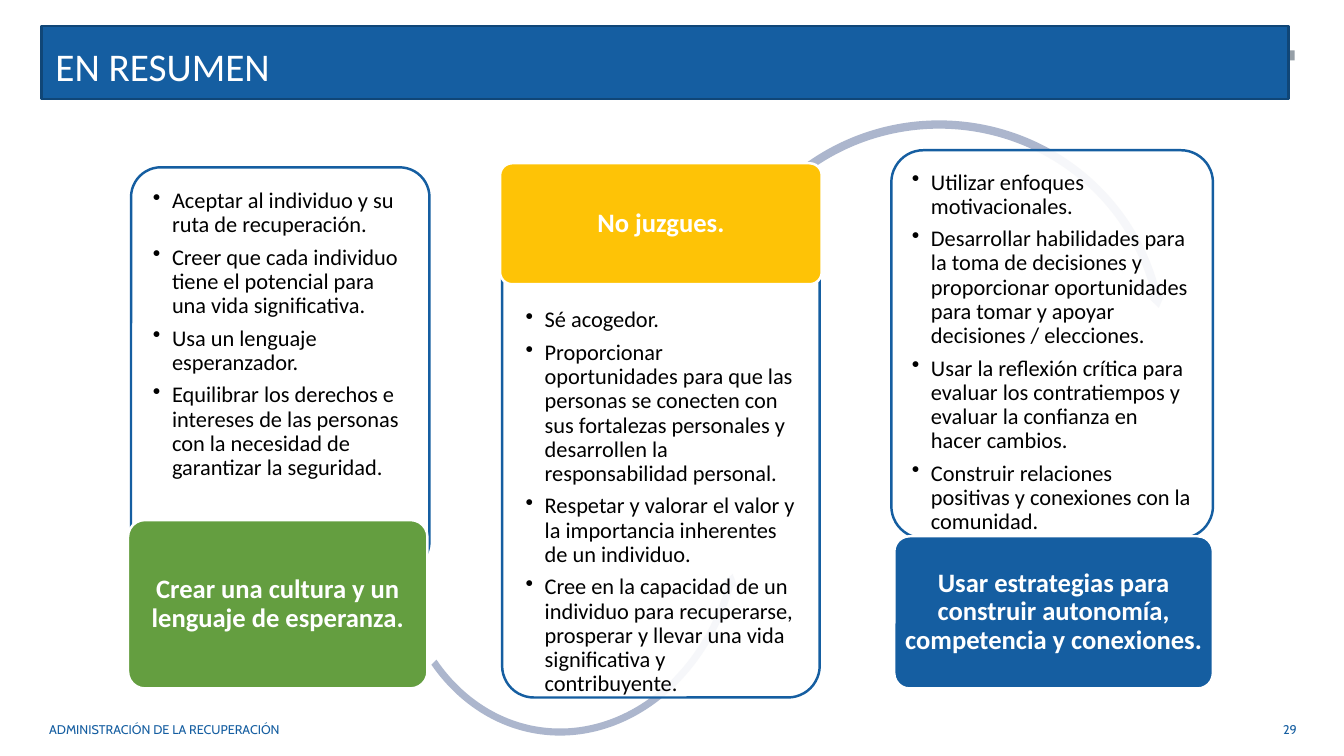
from lxml import etree
from pptx import Presentation
from pptx.dml.color import RGBColor
from pptx.enum.shapes import MSO_SHAPE as Preset
from pptx.enum.text import MSO_ANCHOR as Anchor, MSO_AUTO_SIZE as AutoSize, PP_ALIGN as Align
from pptx.oxml.ns import qn
from pptx.util import Inches, Pt

BLUE, NAVY, GREEN, YELLOW = "155EA1", "104677", "649E40", "FEC306"
WHITE, BLACK, GREY, ARC = "FFFFFF", "000000", "969FA7", "ACB6CD"
CORNER = 0.1  # corner radius as a share of the shorter side

# Each column: card frame, card insets, bullets, label frame, label colour, label text
COLUMNS = [
    ((1.3, 1.66, 2.96, 4.01), (0.22, 0.22, 0.22, 1.11), [
        "Aceptar al individuo y su ruta de recuperación.",
        "Creer que cada individuo tiene el potencial para una vida significativa.",
        "Usa un lenguaje esperanzador.",
        "Equilibrar los derechos e intereses de las personas con la necesidad "
        "de garantizar la seguridad.",
    ], (1.27, 5.16, 2.97, 1.67), GREEN, "Crear una cultura y un lenguaje de esperanza."),
    ((4.98, 1.69, 3.15, 5.23), (0.23, 1.37, 0.23, 0.23), [
        "Sé acogedor.",
        "Proporcionar oportunidades para que las personas se conecten con sus "
        "fortalezas personales y desarrollen la responsabilidad personal.",
        "Respetar y valorar el valor y la importancia inherentes de un individuo.",
        "Cree en la capacidad de un individuo para recuperarse, prosperar y "
        "llevar una vida significativa y contribuyente.",
    ], (4.96, 1.62, 3.19, 1.2), YELLOW, "No juzgues."),
    ((8.84, 1.49, 3.19, 3.85), (0.2, 0.2, 0.2, 0.2), [
        "Utilizar enfoques motivacionales.",
        "Desarrollar habilidades para la toma de decisiones y proporcionar "
        "oportunidades para tomar y apoyar decisiones / elecciones.",
        "Usar la reflexión crítica para evaluar los contratiempos y evaluar "
        "la confianza en hacer cambios.",
        "Construir relaciones positivas y conexiones con la comunidad.",
    ], (8.87, 5.32, 3.16, 1.51), BLUE,
     "Usar estrategias para construir autonomía, competencia y conexiones."),
]

# The arc that follows a column: preset, frame, rotation, adjustments
ARCS = [
    (Preset.LEFT_CIRCULAR_ARROW, (3.87, 3.18, 3.53, 4.17), 7.9,
     (0.02, 2.363, 6.469, 76.596, 0.023)),
    (Preset.CIRCULAR_ARROW, (7.01, 1.14, 4.61, 4.56), 0,
     (0.018, 2.155, 208.143, 137.808, 0.021)),
]


def color(value):
    return RGBColor.from_string(value)


def set_font(paragraph, size, value, name="Calibri", bold=False):
    for run in paragraph.runs:
        font = run.font
        font.name, font.size, font.bold = name, Pt(size), bold
        font.color.rgb = color(value)


def add_preset(slide, preset, frame, fill, line=None):
    shape = slide.shapes.add_shape(preset, *map(Inches, frame))
    shape.shadow.inherit = False
    shape.fill.solid()
    shape.fill.fore_color.rgb = color(fill)
    if line:
        shape.line.color.rgb = color(line)
        shape.line.width = Pt(1.75)
    else:
        shape.line.fill.background()
    return shape


def add_rounded(slide, frame, fill, line, insets, anchor):
    shape = add_preset(slide, Preset.ROUNDED_RECTANGLE, frame, fill, line)
    shape.adjustments[0] = CORNER
    # The preset already keeps text clear of its corners
    clearance = 0.29 * CORNER * min(frame[2:])
    text_frame = shape.text_frame
    text_frame.word_wrap = True
    text_frame.vertical_anchor = anchor
    for side, inset in zip(("left", "top", "right", "bottom"), insets):
        setattr(text_frame, f"margin_{side}", Inches(round(inset - clearance, 2)))
    return shape


def add_bullet(paragraph):
    properties = paragraph._p.get_or_add_pPr()
    properties.set("marL", str(Inches(0.19)))
    properties.set("indent", str(-Inches(0.19)))
    etree.SubElement(properties, qn("a:buChar")).set("char", "•")


def add_card(slide, frame, insets, items):
    card = add_rounded(slide, frame, WHITE, BLUE, insets, Anchor.TOP)
    fill_color = card._element.spPr.find(qn("a:solidFill"))[0]
    etree.SubElement(fill_color, qn("a:alpha")).set("val", "90000")
    card.text_frame.text = "\n".join(items)
    for paragraph in card.text_frame.paragraphs:
        add_bullet(paragraph)
        paragraph.alignment = Align.LEFT
        paragraph.line_spacing = 0.9
        paragraph.space_after = Pt(6)
        set_font(paragraph, 16, BLACK)


def add_label(slide, frame, fill, text):
    label = add_rounded(slide, frame, fill, WHITE, (0.08, 0.08, 0.08, 0.08), Anchor.MIDDLE)
    label.text_frame.text = text
    paragraph = label.text_frame.paragraphs[0]
    paragraph.alignment = Align.CENTER
    paragraph.line_spacing = 0.9
    set_font(paragraph, 19, WHITE, bold=True)


def add_arc(slide, preset, frame, rotation, adjustments):
    arc = add_preset(slide, preset, frame, ARC)
    arc.rotation = rotation
    for index, value in enumerate(adjustments):
        arc.adjustments[index] = value


def add_footer(slide, frame, text, alignment):
    box = slide.shapes.add_textbox(*map(Inches, frame))
    box.text_frame.word_wrap = True
    box.text_frame.vertical_anchor = Anchor.MIDDLE
    box.text_frame.text = text
    paragraph = box.text_frame.paragraphs[0]
    paragraph.alignment = alignment
    set_font(paragraph, 9, BLUE, name="Cabin")


def add_title(slide, text):
    title = slide.shapes.title
    title.left, title.top, title.width, title.height = map(Inches, (0.45, 0.33, 12.29, 0.65))
    text_frame = title.text_frame
    text_frame.text = text
    text_frame.auto_size = AutoSize.NONE
    text_frame.vertical_anchor = Anchor.MIDDLE
    text_frame.paragraphs[0].alignment = Align.LEFT
    set_font(text_frame.paragraphs[0], 28, WHITE)
    slide.shapes._spTree.append(title._element)  # bring in front of the banner


def main():
    presentation = Presentation()
    presentation.slide_width = Inches(13.33)
    presentation.slide_height = Inches(7.5)
    slide = presentation.slides.add_slide(presentation.slide_layouts[5])

    # Banner and title
    add_preset(slide, Preset.RECTANGLE, (8.79, 0.5, 4.05, 0.1), GREY)
    add_preset(slide, Preset.RECTANGLE, (0.41, 0.26, 12.37, 0.72), BLUE, NAVY)
    add_title(slide, "EN RESUMEN")

    # Footer
    add_footer(slide, (11.81, 7.04, 1.15, 0.4), "29", Align.RIGHT)
    add_footer(slide, (0.39, 7.04, 7.46, 0.4), "ADMINISTRACIÓN DE LA RECUPERACIÓN", Align.LEFT)

    # Columns, each arc lying between its card and its label
    for index, (frame, insets, items, label_frame, fill, text) in enumerate(COLUMNS):
        add_card(slide, frame, insets, items)
        if index < len(ARCS):
            add_arc(slide, *ARCS[index])
        add_label(slide, label_frame, fill, text)

    presentation.save("out.pptx")


if __name__ == "__main__":
    main()
